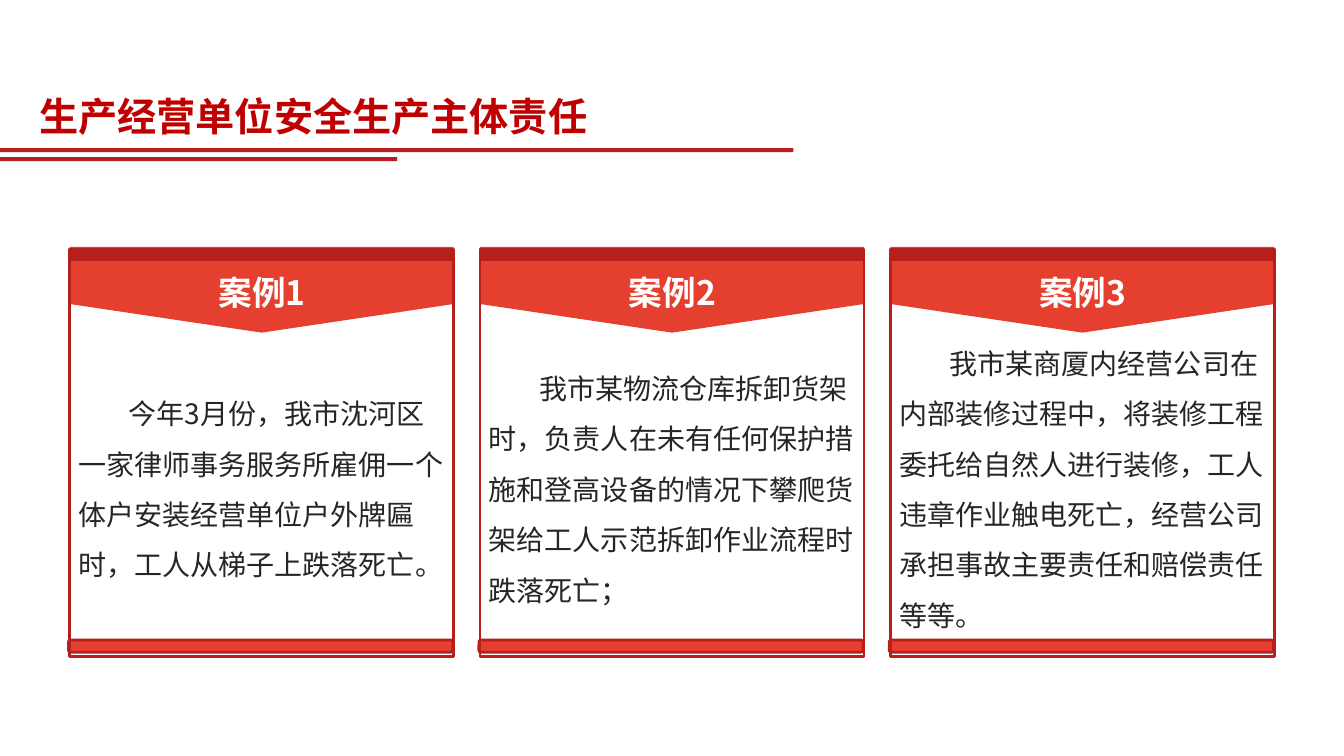
from lxml.etree import SubElement
from pptx import Presentation
from pptx.dml.color import RGBColor
from pptx.enum.shapes import MSO_SHAPE as Shape
from pptx.enum.text import PP_ALIGN as Align
from pptx.oxml.ns import qn
from pptx.util import Pt

PX = 9144  # 100 px to the inch
CJK = "Noto Sans CJK SC"
RED, DARK_RED, RULE_RED = "E5402F", "B71F1C", "B61F22"
CARD_LEFT, CARD_TOP, CARD_PITCH = 68, 247, 407
CARD_WIDTH, CARD_HEIGHT = 383, 404

# heading, body text, number of lines it fills
CASES = [
    ("案例1", "今年3月份，我市沈河区一家律师事务服务所雇佣一个体户安装经营单位户外牌匾时，"
              "工人从梯子上跌落死亡。", 4),
    ("案例2", "我市某物流仓库拆卸货架时，负责人在未有任何保护措施和登高设备的情况下"
              "攀爬货架给工人示范拆卸作业流程时跌落死亡；", 5),
    ("案例3", "我市某商厦内经营公司在内部装修过程中，将装修工程委托给自然人进行装修，"
              "工人违章作业触电死亡，经营公司承担事故主要责任和赔偿责任等等。", 6),
]


def color(value):
    return RGBColor.from_string(value)


def add_block(page, kind, left, top, width, height, fill=None, line=None):
    shape = page.shapes.add_shape(kind, left * PX, top * PX, width * PX, height * PX)
    shape.shadow.inherit = False
    if fill:
        shape.fill.solid()
        shape.fill.fore_color.rgb = color(fill)
    else:
        shape.fill.background()
    if line:
        shape.line.color.rgb = color(line)
        shape.line.width = Pt(2)
    else:
        shape.line.fill.background()
    return shape


def add_text(page, left, top, width, height, text, size, ink,
             bold=False, align=Align.LEFT, font=CJK, indent=0, spacing=1.0):
    box = page.shapes.add_textbox(left * PX, top * PX, width * PX, height * PX)
    box.text_frame.word_wrap = True
    para = box.text_frame.paragraphs[0]
    para.text = text
    para.alignment = align
    para.line_spacing = spacing
    properties = para._p.get_or_add_pPr()
    properties.set("marL", "0")
    properties.set("indent", str(indent * PX))
    properties.set("hangingPunct", "0")  # keeps commas inside the box
    para.font.size = Pt(size)
    para.font.bold = bold
    para.font.name = font
    para.font.color.rgb = color(ink)
    SubElement(properties.find(qn("a:defRPr")), qn("a:ea"), typeface=CJK)


def add_header(page, left, top):
    add_text(page, left + 29, top, 1197, 57, "生产经营单位安全生产主体责任",
             28, "C00000", bold=True, font="Arial")
    for offset, width in ((60, 787), (69, 394)):
        add_block(page, Shape.RECTANGLE, left, top + offset, width, 4, RULE_RED)


def add_banner(page, left, top, width, height):
    """Pentagon arrow turned to point down, filling the given box."""
    banner = add_block(page, Shape.PENTAGON, left + (width - height) // 2,
                       top + (height - width) // 2, height, width, RED)
    banner.adjustments[0] = 0.334
    banner.rotation = 90


def add_card(page, left, top, width, height, heading, body, lines):
    body_height = lines * 50 + 12
    add_text(page, left, top + 231 - body_height // 2, width, body_height, body,
             20, "262626", indent=50, spacing=1.5)
    add_banner(page, left + 1, top - 2, width - 2, 85)
    add_block(page, Shape.FLOWCHART_PROCESS, left, top, width, 12, DARK_RED)
    add_block(page, Shape.ROUNDED_RECTANGLE, left, top + height - 16, width - 2, 12,
              RED, DARK_RED)
    frame = add_block(page, Shape.ROUNDED_RECTANGLE, left + 1, top, width - 2, height,
                      line=DARK_RED)
    frame.adjustments[0] = 0
    add_text(page, left + 101, top + 18, 182, 51, heading, 24, "FFFFFF",
             bold=True, align=Align.CENTER)


def main():
    deck = Presentation()
    deck.slide_width, deck.slide_height = 1333 * PX, 750 * PX
    page = deck.slides.add_slide(deck.slide_layouts[6])
    add_header(page, 0, 87)
    for index, case in enumerate(CASES):
        add_card(page, CARD_LEFT + index * CARD_PITCH, CARD_TOP,
                 CARD_WIDTH, CARD_HEIGHT, *case)
    deck.save("out.pptx")


if __name__ == "__main__":
    main()
